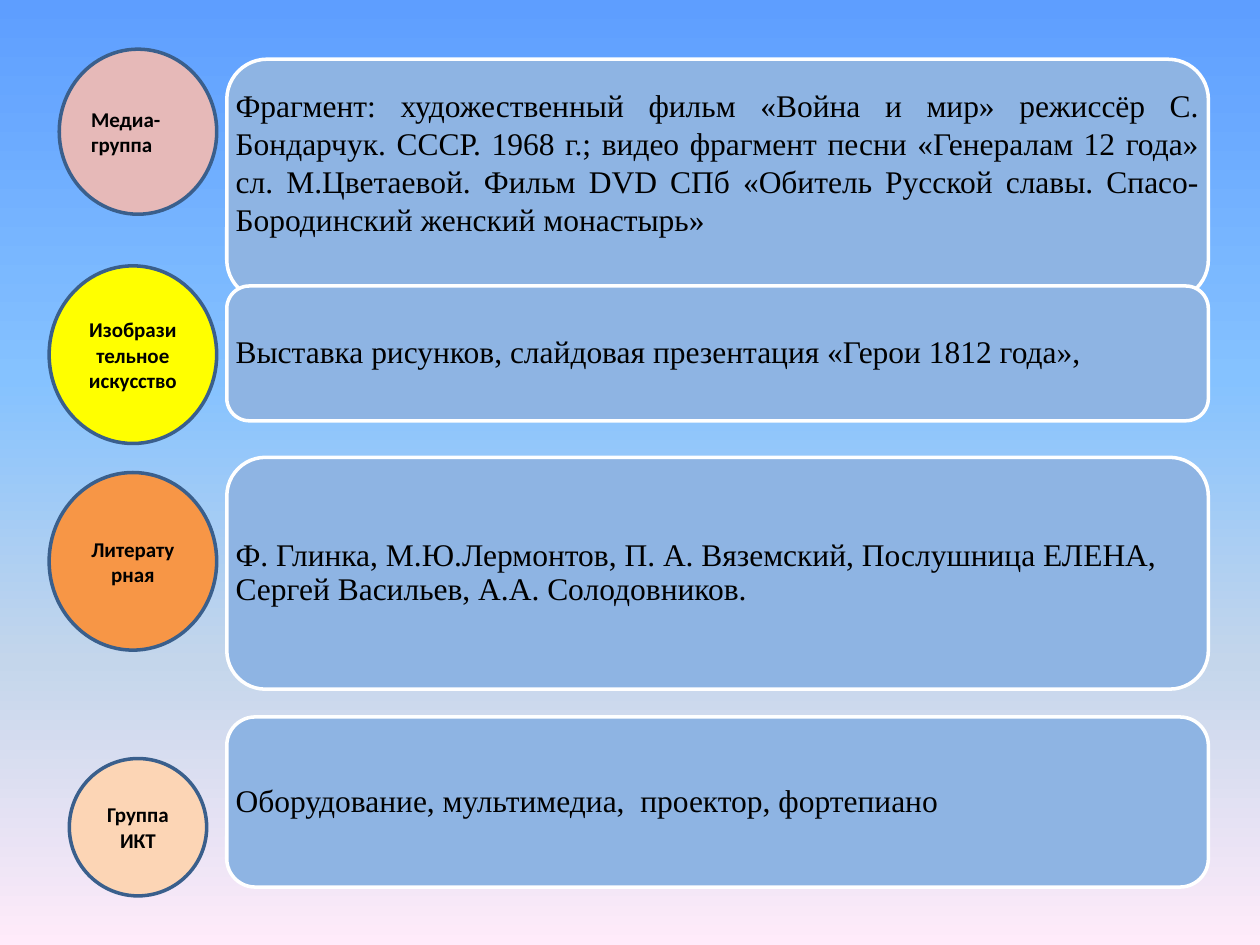
from lxml.etree import SubElement
from pptx import Presentation
from pptx.dml.color import RGBColor
from pptx.enum.shapes import MSO_SHAPE
from pptx.enum.text import MSO_ANCHOR, PP_ALIGN
from pptx.oxml.ns import qn
from pptx.util import Inches, Pt

BLACK = RGBColor(0x00, 0x00, 0x00)
WHITE = RGBColor(0xFF, 0xFF, 0xFF)
PANEL_BLUE = RGBColor(0x8E, 0xB4, 0xE3)
CIRCLE_EDGE = RGBColor(0x3A, 0x5F, 0x8C)
PINK = RGBColor(0xE6, 0xB9, 0xB8)
YELLOW = RGBColor(0xFF, 0xFF, 0x00)
ORANGE = RGBColor(0xF7, 0x96, 0x46)
PEACH = RGBColor(0xFC, 0xD5, 0xB5)
SKY = [(0, RGBColor(0x5E, 0x9E, 0xFF)), (40, RGBColor(0x85, 0xC2, 0xFF)),
       (70, RGBColor(0xC4, 0xD6, 0xEB)), (100, RGBColor(0xFF, 0xEB, 0xFA))]

PANEL_LEFT, PANEL_WIDTH, PANEL_INSET = 1.8, 7.79, 0.07
PANEL_FONT = {"name": "Times New Roman", "size": Pt(18)}
CIRCLE_FONT = {"name": "Calibri", "size": Pt(12), "bold": True}

# Panels: top, height, text, alignment, line spacing, extra bottom inset
PANELS = [
    (0.47, 1.91, "Фрагмент: художественный фильм «Война и мир» режиссёр С. Бондарчук. "
     "СССР. 1968 г.; видео фрагмент песни «Генералам 12 года» сл. М.Цветаевой. "
     "Фильм DVD СПб «Обитель Русской славы. Спасо-Бородинский женский монастырь»",
     PP_ALIGN.JUSTIFY, 1.0, 0.28),
    (2.27, 1.07, "Выставка рисунков, слайдовая презентация «Герои 1812 года»,",
     PP_ALIGN.LEFT, 0.9, 0),
    (3.63, 1.84, "Ф. Глинка, М.Ю.Лермонтов, П. А. Вяземский, Послушница ЕЛЕНА, "
     "Сергей Васильев, А.А. Солодовников.", PP_ALIGN.LEFT, 0.9, 0),
    (5.69, 1.35, "Оборудование, мультимедиа,  проектор, фортепиано",
     PP_ALIGN.LEFT, 0.9, 0),
]

# Circles: left, top, width, height, fill, paragraphs, alignment, side inset
CIRCLES = [
    (0.47, 0.39, 1.25, 1.31, PINK, ["Медиа-", "группа"], PP_ALIGN.LEFT, 0.07),
    (0.39, 2.11, 1.33, 1.41, YELLOW, ["Изобразительное искусство"], PP_ALIGN.CENTER, 0.1),
    (0.39, 3.75, 1.33, 1.41, ORANGE, ["Литературная"], PP_ALIGN.CENTER, 0.1),
    (0.55, 6.02, 1.09, 1.09, PEACH, ["Группа ИКТ"], PP_ALIGN.CENTER, 0.1),
]


def paint_background(slide):
    fill = slide.background.fill
    fill.gradient()
    fill.gradient_angle = 270
    stops = slide._element.find(".//" + qn("a:gsLst"))
    for stop in list(stops):
        stops.remove(stop)
    for percent, color in SKY:
        stop = SubElement(stops, qn("a:gs"), pos=str(percent * 1000))
        SubElement(stop, qn("a:srgbClr"), val=str(color))


def add_outline(slide, preset, box, fill, edge):
    shape = slide.shapes.add_shape(preset, *map(Inches, box))
    shape.shadow.inherit = False
    shape.fill.solid()
    shape.fill.fore_color.rgb = fill
    shape.line.color.rgb = edge
    shape.line.width = Pt(2)
    return shape


def write(shape, lines, font, align, insets, spacing=1.0):
    frame = shape.text_frame
    frame.word_wrap = True
    frame.vertical_anchor = MSO_ANCHOR.MIDDLE
    for side, inset in zip(("left", "top", "right", "bottom"), insets):
        setattr(frame, f"margin_{side}", Inches(inset))
    frame.text = "\n".join(lines)
    for paragraph in frame.paragraphs:
        paragraph.alignment = align
        paragraph.line_spacing = spacing
        for run in paragraph.runs:
            run.font.color.rgb = BLACK
            for key, value in font.items():
                setattr(run.font, key, value)


presentation = Presentation()
presentation.slide_width, presentation.slide_height = Inches(10), Inches(7.5)
slide = presentation.slides.add_slide(presentation.slide_layouts[6])
paint_background(slide)

# Description panels, with text over the full panel width
for top, height, text, align, spacing, extra in PANELS:
    box = (PANEL_LEFT, top, PANEL_WIDTH, height)
    add_outline(slide, MSO_SHAPE.ROUNDED_RECTANGLE, box, PANEL_BLUE, WHITE)
    description = slide.shapes.add_textbox(*map(Inches, box))
    insets = [PANEL_INSET] * 3 + [PANEL_INSET + extra]
    write(description, [text], PANEL_FONT, align, insets, spacing)

# Group names
for left, top, width, height, fill, lines, align, inset in CIRCLES:
    circle = add_outline(slide, MSO_SHAPE.OVAL, (left, top, width, height), fill, CIRCLE_EDGE)
    write(circle, lines, CIRCLE_FONT, align, (inset, 0.05, inset, 0.05))

presentation.save("out.pptx")
